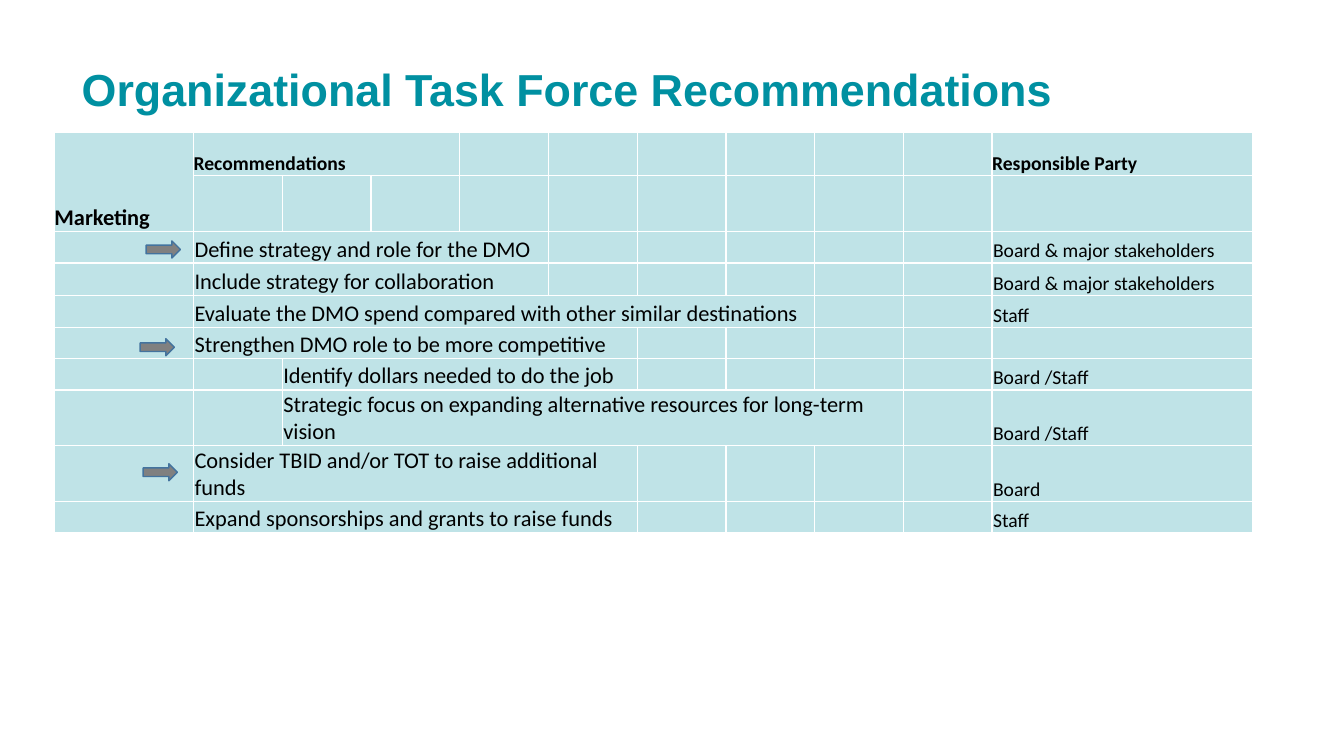
from lxml import etree
from pptx import Presentation
from pptx.dml.color import RGBColor
from pptx.enum.shapes import MSO_SHAPE
from pptx.enum.text import MSO_ANCHOR, MSO_AUTO_SIZE, PP_ALIGN
from pptx.oxml.ns import qn
from pptx.util import Pt

PX = 9144  # one hundredth of an inch
ARROW = MSO_SHAPE.RIGHT_ARROW
BOTTOM, MIDDLE = MSO_ANCHOR.BOTTOM, MSO_ANCHOR.MIDDLE
NO_FIT = MSO_AUTO_SIZE.NONE
LEFT = PP_ALIGN.LEFT

COLORS = {
    "teal": "0090A1",
    "black": "000000",
    "white": "FFFFFF",
    "gray": "808080",
    "blue": "43739E",
}
COLS = [138] + [88] * 9 + [258]
ROWS = [43, 56, 31, 32, 32] + [31] * 5
PARTY = len(COLS) - 1
HEADS = [
    # row, column, rows spanned, columns spanned, text, size
    (0, 0, 2, 1, "Marketing", 16),
    (0, 1, 1, 3, "Recommendations", 14),
    (0, PARTY, 1, 1, "Responsible Party", 14),
]
TASKS = [
    # column, columns spanned, task, responsible party
    (1, 4, "Define strategy and role for the DMO", "Board & major stakeholders"),
    (1, 4, "Include strategy for collaboration", "Board & major stakeholders"),
    (1, 7, "Evaluate the DMO spend compared with other similar destinations", "Staff"),
    (1, 5, "Strengthen DMO role to be more competitive", ""),
    (2, 4, "Identify dollars needed to do the job", "Board /Staff"),
    (2, 7, "Strategic focus on expanding alternative resources for long-term vision",
     "Board /Staff"),
    (1, 5, "Consider TBID and/or TOT to raise additional funds", "Board"),
    (1, 5, "Expand sponsorships and grants to raise funds", "Staff"),
]
ARROWS = [(145, 239), (139, 336), (142, 460)]


def color(name):
    return RGBColor.from_string(COLORS[name])


def box(left, top, width, height):
    return [n * PX for n in (left, top, width, height)]


def write(frame, text, size=16, font="Calibri", ink="black", bold=False, space=None):
    para = frame.paragraphs[0]
    para.alignment = LEFT
    para.line_spacing = space
    run = para.add_run()
    run.text = text
    run.font.size = Pt(size)
    run.font.name = font
    run.font.bold = bold
    run.font.color.rgb = color(ink)


def add_title(slide):
    title = slide.shapes.title
    title.left, title.top, title.width, title.height = box(71, 64, 1150, 54)
    frame = title.text_frame
    frame.auto_size = NO_FIT
    frame.vertical_anchor = MIDDLE
    write(frame, "Organizational Task Force Recommendations",
          size=32, font="Arial", ink="teal", bold=True, space=0.9)


def style_cell(cell):
    """Give a cell its translucent fill, thin white borders and no margins."""
    cell.margin_left = cell.margin_right = 0
    cell.margin_top = cell.margin_bottom = 0
    cell.vertical_anchor = BOTTOM
    cell.fill.solid()
    cell.fill.fore_color.rgb = color("teal")
    props = cell._tc.tcPr
    tint = props.find(qn("a:solidFill")).find(qn("a:srgbClr"))
    etree.SubElement(tint, qn("a:alpha"), val="25000")
    for i, side in enumerate(("lnL", "lnR", "lnT", "lnB")):
        line = etree.Element(qn("a:" + side), w=str(Pt(1)))
        fill = etree.SubElement(line, qn("a:solidFill"))
        etree.SubElement(fill, qn("a:srgbClr"), val=COLORS["white"])
        props.insert(i, line)


def fill_task(cell, text, size):
    cell.margin_left = cell.margin_right = cell.margin_top = PX
    write(cell.text_frame, text, size=size)


def add_grid(slide):
    area = box(54, 131, sum(COLS), sum(ROWS))
    grid = slide.shapes.add_table(len(ROWS), len(COLS), *area).table
    grid.first_row = grid.horz_banding = False
    for col, width in zip(grid.columns, COLS):
        col.width = width * PX
    for row, height in zip(grid.rows, ROWS):
        row.height = height * PX
    for cell in grid.iter_cells():
        style_cell(cell)

    for row, col, down, across, text, size in HEADS:
        cell = grid.cell(row, col)
        if down * across > 1:
            cell.merge(grid.cell(row + down - 1, col + across - 1))
        write(cell.text_frame, text, size=size, bold=True)

    for row, (col, span, task, party) in enumerate(TASKS, start=2):
        cell = grid.cell(row, col)
        cell.merge(grid.cell(row, col + span - 1))
        fill_task(cell, task, 16)
        if party:
            fill_task(grid.cell(row, PARTY), party, 14)


def add_arrow(slide, left, top):
    arrow = slide.shapes.add_shape(ARROW, *box(left, top, 34, 17))
    arrow.shadow.inherit = False
    arrow.fill.solid()
    arrow.fill.fore_color.rgb = color("gray")
    arrow.line.color.rgb = color("blue")
    arrow.line.width = Pt(1)


def main():
    deck = Presentation()
    deck.slide_width, deck.slide_height = 1333 * PX, 750 * PX
    slide = deck.slides.add_slide(deck.slide_layouts[5])
    add_title(slide)
    add_grid(slide)
    for left, top in ARROWS:
        add_arrow(slide, left, top)
    deck.save("out.pptx")


if __name__ == "__main__":
    main()
